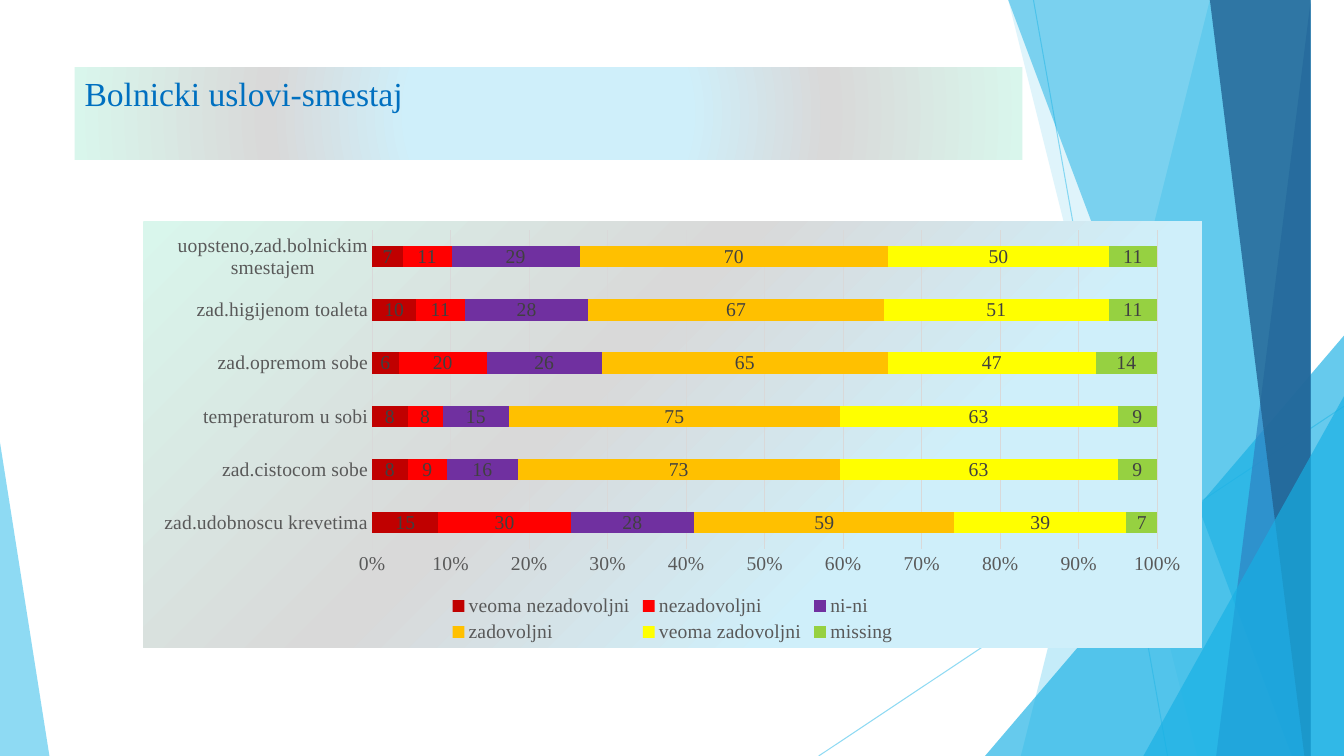
from dataclasses import dataclass

from lxml.etree import SubElement
from pptx import Presentation
from pptx.chart.data import CategoryChartData
from pptx.dml.color import RGBColor
from pptx.enum.chart import XL_CHART_TYPE as ChartType
from pptx.enum.chart import XL_LEGEND_POSITION as LegendPosition
from pptx.enum.chart import XL_TICK_MARK as TickMark
from pptx.enum.shapes import MSO_CONNECTOR as Connector
from pptx.enum.shapes import MSO_SHAPE as Preset
from pptx.enum.text import MSO_ANCHOR as Anchor
from pptx.enum.text import PP_ALIGN as Align
from pptx.oxml import parse_xml
from pptx.oxml.ns import nsdecls, qn
from pptx.util import Inches, Pt

FONT = "Times New Roman"
SKY, AZURE, BLUE, NAVY = "5FCBEF", "17B0E4", "2E83C3", "226292"
AXIS_TEXT, GRID, LABEL_TEXT = "595959", "D9D9D9", "404040"
TOP, RIGHT, BOTTOM = -0.01, 13.33, 7.5
STOPS = ((29, "CFEFFA"), (59, "D9D9D9"), (100, "D9F6EC"), (100, "B7E8F8"))


@dataclass
class Ray:
    start: tuple[float, float]
    end: tuple[float, float]


@dataclass
class Band:
    top_x: float
    bottom_x: float
    color: str
    alpha: int


@dataclass
class Triangle:
    left: float
    top: float
    width: float
    apex: float
    color: str
    alpha: int


@dataclass
class Answer:
    name: str
    values: tuple[int, ...]
    color: str


DECORATION = (
    Ray((10.25, 0), (11.58, BOTTOM)),
    Ray((RIGHT, 4.03), (8.12, BOTTOM)),
    Band(12.28, 10.04, SKY, 36),
    Band(10.5, 11.83, SKY, 20),
    Triangle(9.77, 3.33, 3.56, 1, AZURE, 66),
    Band(10.21, 12.91, AZURE, 50),
    Band(13.03, 11.92, BLUE, 70),
    Band(11.96, 13.18, NAVY, 80),
    Triangle(11.34, 3.93, 1.99, 1, AZURE, 66),
    Triangle(0, 4.39, 0.49, 0, SKY, 70),
)

QUESTIONS = (
    "zad.udobnoscu krevetima",
    "zad.cistocom sobe",
    "temperaturom u sobi",
    "zad.opremom sobe",
    "zad.higijenom toaleta",
    "uopsteno,zad.bolnickim smestajem",
)
ANSWERS = (
    Answer("veoma nezadovoljni", (15, 8, 8, 6, 10, 7), "C00000"),
    Answer("nezadovoljni", (30, 9, 8, 20, 11, 11), "FF0000"),
    Answer("ni-ni", (28, 16, 15, 26, 28, 29), "7030A0"),
    Answer("zadovoljni", (59, 73, 75, 65, 67, 70), "FFC000"),
    Answer("veoma zadovoljni", (39, 63, 63, 47, 51, 50), "FFFF00"),
    Answer("missing", (7, 9, 9, 14, 11, 11), "96D141"),
)


def rgb(color: str) -> RGBColor:
    return RGBColor.from_string(color)


def paint(fill, color: str) -> None:
    fill.solid()
    fill.fore_color.rgb = rgb(color)


def set_font(font, size: int, color: str) -> None:
    font.name = FONT
    font.size = Pt(size)
    font.color.rgb = rgb(color)


def set_alpha(shape, percent: int) -> None:
    for color in shape._element.spPr.iter(qn("a:srgbClr")):
        SubElement(color, qn("a:alpha")).set("val", str(percent * 1000))


def gradient(left: int, top: int, right: int, bottom: int):
    stops = "".join(
        f'<a:gs pos="{position * 1000}"><a:srgbClr val="{color}"/></a:gs>'
        for position, color in STOPS
    )
    return parse_xml(
        f'<a:gradFill {nsdecls("a")} rotWithShape="1"><a:gsLst>{stops}</a:gsLst>'
        f'<a:path path="circle"><a:fillToRect l="{left * 1000}" t="{top * 1000}" '
        f'r="{right * 1000}" b="{bottom * 1000}"/></a:path></a:gradFill>'
    )


def draw_ray(page, ray: Ray) -> None:
    points = [Inches(value) for value in ray.start + ray.end]
    line = page.shapes.add_connector(Connector.STRAIGHT, *points)
    line.line.width = Pt(0.75)
    paint(line.line.fill, SKY)
    set_alpha(line, 70)
    SubElement(line._element.spPr, qn("a:effectLst"))


def finish_facet(shape, color: str, alpha: int) -> None:
    shape.shadow.inherit = False
    paint(shape.fill, color)
    set_alpha(shape, alpha)
    shape.line.fill.background()


def draw_band(page, band: Band) -> None:
    builder = page.shapes.build_freeform(band.top_x, TOP, scale=Inches(1))
    corners = ((RIGHT, TOP), (RIGHT, BOTTOM), (band.bottom_x, BOTTOM))
    builder.add_line_segments(corners, close=True)
    finish_facet(builder.convert_to_shape(), band.color, band.alpha)


def draw_triangle(page, item: Triangle) -> None:
    bounds = (item.left, item.top, item.width, BOTTOM - item.top)
    shape = page.shapes.add_shape(Preset.ISOSCELES_TRIANGLE, *map(Inches, bounds))
    shape.adjustments[0] = item.apex
    finish_facet(shape, item.color, item.alpha)


def draw_title(page) -> None:
    box = page.shapes.add_shape(Preset.RECTANGLE, *map(Inches, (0.74, 0.67, 9.4, 0.91)))
    box.shadow.inherit = False
    box.fill.background()
    properties = box._element.spPr
    properties.replace(properties.find(qn("a:noFill")), gradient(50, 50, 50, 50))
    box.line.fill.background()
    box.text_frame.word_wrap = True
    box.text_frame.vertical_anchor = Anchor.TOP
    para = box.text_frame.paragraphs[0]
    para.alignment = Align.LEFT
    span = para.add_run()
    span.text = "Bolnicki uslovi-smestaj"
    set_font(span.font, 24, "0070C0")


def draw_chart(page) -> None:
    data = CategoryChartData()
    data.categories = QUESTIONS
    for answer in ANSWERS:
        data.add_series(answer.name, answer.values)
    bounds = map(Inches, (1.42, 2.2, 10.5, 4.22))
    chart = page.shapes.add_chart(ChartType.BAR_STACKED_100, *bounds, data).chart
    chart.has_title = False
    set_font(chart.font, 14, "000000")
    background = parse_xml(f'<c:spPr {nsdecls("c", "a")}><a:ln><a:noFill/></a:ln></c:spPr>')
    background.insert(0, gradient(100, 100, 0, 0))
    chart._chartSpace.find(qn("c:txPr")).addprevious(background)

    chart.has_legend = True
    chart.legend.position = LegendPosition.BOTTOM
    chart.legend.include_in_layout = False
    set_font(chart.legend.font, 14, AXIS_TEXT)

    questions, shares = chart.category_axis, chart.value_axis
    for axis in (questions, shares):
        axis.major_tick_mark = axis.minor_tick_mark = TickMark.NONE
        set_font(axis.tick_labels.font, 14, AXIS_TEXT)
    shares.has_major_gridlines = True
    for line in (questions.format.line, shares.major_gridlines.format.line):
        line.width = Pt(0.75)
        paint(line.fill, GRID)
    shares.format.line.fill.background()
    shares.tick_labels.number_format = "0%"
    shares.tick_labels.number_format_is_linked = False

    plot = chart.plots[0]
    plot.gap_width, plot.overlap = 150, 100
    plot.vary_by_categories = False
    for series, answer in zip(plot.series, ANSWERS):
        paint(series.format.fill, answer.color)
        series.data_labels.show_value = True
        set_font(series.data_labels.font, 14, LABEL_TEXT)


def main() -> None:
    deck = Presentation()
    deck.slide_width, deck.slide_height = Inches(RIGHT), Inches(BOTTOM)
    page = deck.slides.add_slide(deck.slide_layouts[6])
    painters = {Ray: draw_ray, Band: draw_band, Triangle: draw_triangle}
    for item in DECORATION:
        painters[type(item)](page, item)
    draw_title(page)
    draw_chart(page)
    deck.save("out.pptx")


if __name__ == "__main__":
    main()
